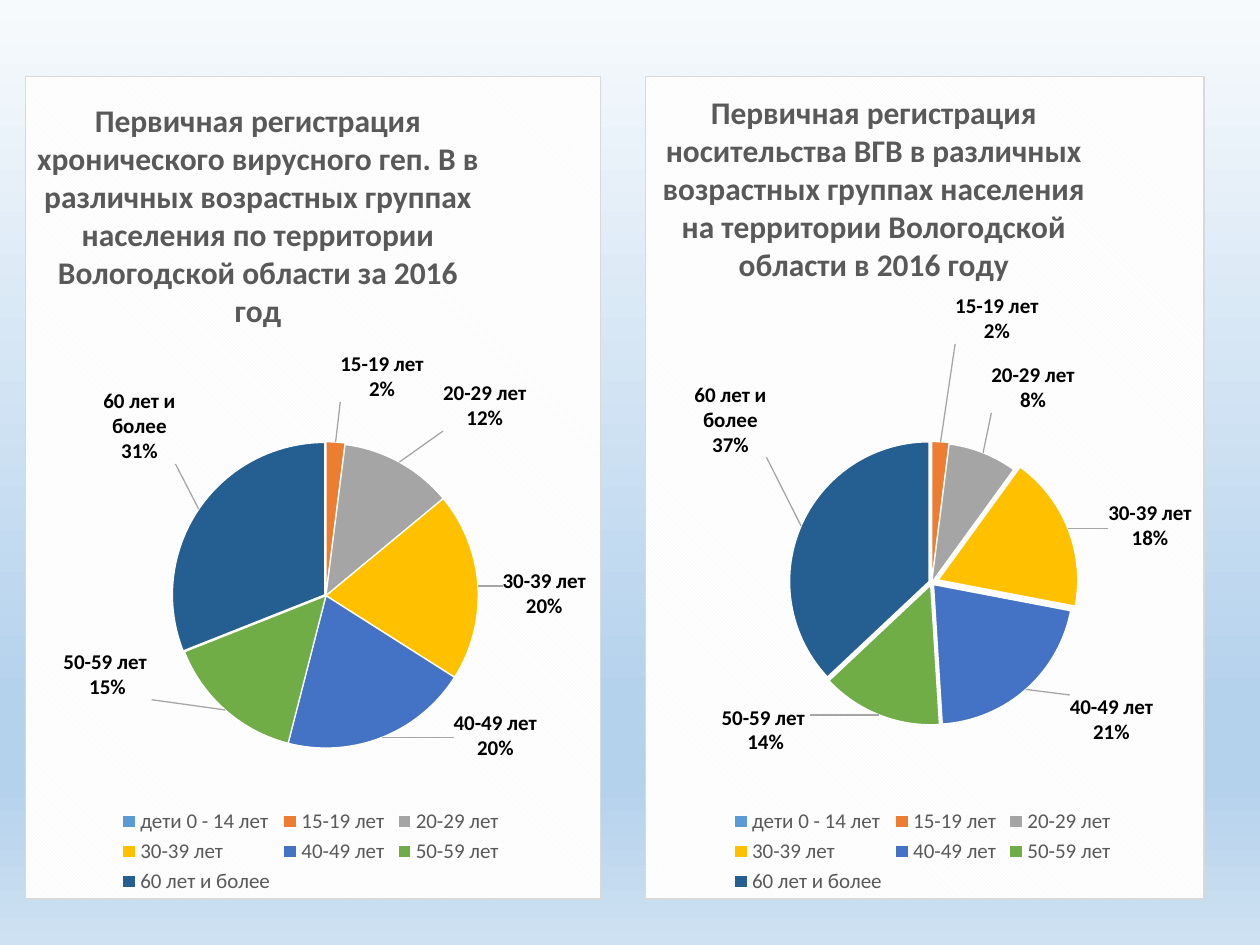
from dataclasses import dataclass
from lxml.etree import SubElement
from pptx import Presentation
from pptx.chart.data import CategoryChartData
from pptx.dml.color import RGBColor
from pptx.enum.chart import XL_CHART_TYPE, XL_LEGEND_POSITION
from pptx.oxml import parse_xml
from pptx.oxml.ns import nsdecls, qn
from pptx.util import Inches, Pt


@dataclass(frozen=True)
class Theme:
    font: str = "Calibri"
    base: int = 10
    small: int = 12
    large: int = 18
    text: str = "595959"
    dark: str = "000000"
    white: str = "FFFFFF"
    hatch: str = "F2F2F2"
    border: str = "D9D9D9"
    lead: str = "A6A6A6"
    sky: tuple = ((0, "F7FAFD"), (74, "B5D2EC"), (83, "B5D2EC"), (100, "CEE1F2"))
    slices: tuple = ("5B9BD5", "ED7D31", "A5A5A5", "FFC000",
                     "4472C4", "70AD47", "255E91")


THEME = Theme()
AGES = ("дети 0 - 14 лет", "15-19 лет", "20-29 лет", "30-39 лет",
        "40-49 лет", "50-59 лет ", "60 лет и более")


@dataclass(frozen=True)
class Pie:
    title: str
    left: float
    width: float
    values: tuple
    plot: tuple    # x, y, width, height as shares of the chart
    head: tuple    # title corner as shares of the chart
    bursts: tuple  # slice offsets in percent
    shifts: tuple  # label moves, from the second slice on


PIES = (
    Pie("Первичная регистрация хронического вирусного геп. В в различных "
        "возрастных группах населения по территории Вологодской области "
        "за 2016 год",
        0.2, 4.57, (0, 2, 12, 20, 20, 15, 31),
        (0.191, 0.4, 0.663, 0.463), (0.01, 0.02), (25, 1, 0, 0, 0, 0, 1),
        ((0.08, -0.04), (0.07, -0.03), (0.03, 0.01),
         (0.12, -0.04), (-0.12, -0.08), (-0.03, -0.05))),
    Pie("Первичная регистрация носительства ВГВ в различных возрастных "
        "группах населения на территории Вологодской области в 2016 году",
        5.12, 4.44, (0, 2, 8, 18, 21, 14, 37),
        (0.2, 0.397, 0.625, 0.437), (0.02, 0.01), (25, 1, 0, 5, 2, 2, 2),
        ((0.1, -0.11), (0.01, -0.04), (0.06, 0.03),
         (0.07, 0), (-0.12, -0.02), (-0.05, -0.08))),
)


def style(font, size, color, bold=False):
    font.name = THEME.font
    font.size = Pt(size)
    font.bold = bold
    font.color.rgb = RGBColor.from_string(color)


def place(x, y, size=None, inner=False):
    """Make a manual chart layout."""
    parts = [("xMode", "edge"), ("yMode", "edge")] if size or inner else []
    if size:
        parts.insert(0, ("layoutTarget", "inner"))
    parts += [("x", x), ("y", y)]
    if size:
        parts += [("w", size[0]), ("h", size[1])]
    body = "".join(f'<c:{tag} val="{val}"/>' for tag, val in parts)
    return parse_xml(f'<c:layout {nsdecls("c")}><c:manualLayout>{body}'
                     '</c:manualLayout></c:layout>')


def put(parent, layout, after=None):
    """Replace the layout of a chart part."""
    for old in parent.findall(qn("c:layout")):
        parent.remove(old)
    spot = 0 if after is None else parent.index(parent.find(qn(after))) + 1
    parent.insert(spot, layout)


def paint_sky(slide):
    fill = slide.background.fill
    fill.gradient()
    fill.gradient_angle = 270
    stops = slide.background._cSld.find(".//" + qn("a:gsLst"))
    for stop in list(stops):
        stops.remove(stop)
    for pos, color in THEME.sky:
        stop = SubElement(stops, qn("a:gs"), pos=str(pos * 1000))
        SubElement(stop, qn("a:srgbClr"), val=color)


def add_panel(chart):
    """Hatch the chart area and give it a border."""
    panel = parse_xml(
        f'<c:spPr {nsdecls("c", "a")}><a:pattFill prst="dkDnDiag">'
        f'<a:fgClr><a:srgbClr val="{THEME.hatch}"/></a:fgClr>'
        f'<a:bgClr><a:srgbClr val="{THEME.white}"/></a:bgClr></a:pattFill>'
        f'<a:ln w="{Pt(0.75)}"><a:solidFill><a:srgbClr val="{THEME.border}"/>'
        '</a:solidFill></a:ln></c:spPr>')
    chart._chartSpace.find(qn("c:chart")).addnext(panel)


def add_title(chart, pie):
    frame = chart.chart_title.text_frame
    frame.text = pie.title
    style(frame.paragraphs[0].font, THEME.large, THEME.text, True)
    put(chart.chart_title._element, place(*pie.head, inner=True), "c:tx")


def add_legend(chart):
    chart.has_legend = True
    chart.legend.position = XL_LEGEND_POSITION.BOTTOM
    chart.legend.include_in_layout = False
    style(chart.legend.font, THEME.small, THEME.text)


def color_slices(series, pie):
    for i, (color, burst) in enumerate(zip(THEME.slices, pie.bursts)):
        look = series.points[i].format
        look.fill.solid()
        look.fill.fore_color.rgb = RGBColor.from_string(color)
        look.line.color.rgb = RGBColor.from_string(THEME.white)
        look.line.width = Pt(0.75)
        point = series._element.findall(qn("c:dPt"))[i]
        point.find(qn("c:spPr")).addprevious(
            parse_xml(f'<c:explosion {nsdecls("c")} val="{burst}"/>'))
    series._element.find(qn("c:dPt")).addprevious(
        parse_xml(f'<c:explosion {nsdecls("c")} val="25"/>'))


def add_labels(series, pie):
    """Show age and share beside each slice, with leader lines."""
    show = ('<c:dLblPos val="bestFit"/><c:showLegendKey val="0"/>'
            '<c:showVal val="0"/><c:showCatName val="1"/>'
            '<c:showSerName val="0"/><c:showPercent val="1"/>'
            '<c:showBubbleSize val="0"/><c:separator>\n</c:separator>')
    text = ('<c:numFmt formatCode="0%" sourceLinked="0"/>'
            '<c:spPr><a:noFill/><a:ln><a:noFill/></a:ln></c:spPr>'
            f'<c:txPr><a:bodyPr/><a:p><a:pPr><a:defRPr sz="{THEME.small}00" '
            f'b="1"><a:solidFill><a:srgbClr val="{THEME.dark}"/></a:solidFill>'
            f'<a:latin typeface="{THEME.font}"/></a:defRPr></a:pPr>'
            '<a:endParaRPr lang="ru-RU"/></a:p></c:txPr>')
    marks = "".join(f'<c:dLbl><c:idx val="{i}"/>{text}{show}</c:dLbl>'
                    for i in range(1, len(AGES)))
    labels = parse_xml(
        f'<c:dLbls {nsdecls("c", "a")}><c:dLbl><c:idx val="0"/>'
        f'<c:delete val="1"/></c:dLbl>{marks}{text}{show}'
        '<c:showLeaderLines val="1"/><c:leaderLines><c:spPr>'
        f'<a:ln w="{Pt(0.75)}"><a:solidFill><a:srgbClr val="{THEME.lead}"/>'
        '</a:solidFill></a:ln></c:spPr></c:leaderLines></c:dLbls>')
    for mark, shift in zip(labels.findall(qn("c:dLbl"))[1:], pie.shifts):
        put(mark, place(*shift), "c:idx")
    series._element.find(qn("c:cat")).addprevious(labels)


def add_pie(slide, pie):
    data = CategoryChartData()
    data.categories = AGES
    data.add_series("Series 1", pie.values)
    chart = slide.shapes.add_chart(
        XL_CHART_TYPE.PIE, Inches(pie.left), Inches(0.6),
        Inches(pie.width), Inches(6.54), data).chart
    style(chart.font, THEME.base, THEME.dark)
    add_panel(chart)
    add_title(chart, pie)
    add_legend(chart)
    plot = chart.plots[0]
    plot.vary_by_categories = True
    color_slices(plot.series[0], pie)
    add_labels(plot.series[0], pie)
    area = chart._chartSpace.find(".//" + qn("c:plotArea"))
    put(area, place(*pie.plot[:2], size=pie.plot[2:]))


def main():
    deck = Presentation()
    deck.slide_width, deck.slide_height = Inches(10), Inches(7.5)
    slide = deck.slides.add_slide(deck.slide_layouts[6])
    paint_sky(slide)
    for pie in PIES:
        add_pie(slide, pie)
    deck.save("out.pptx")


if __name__ == "__main__":
    main()
